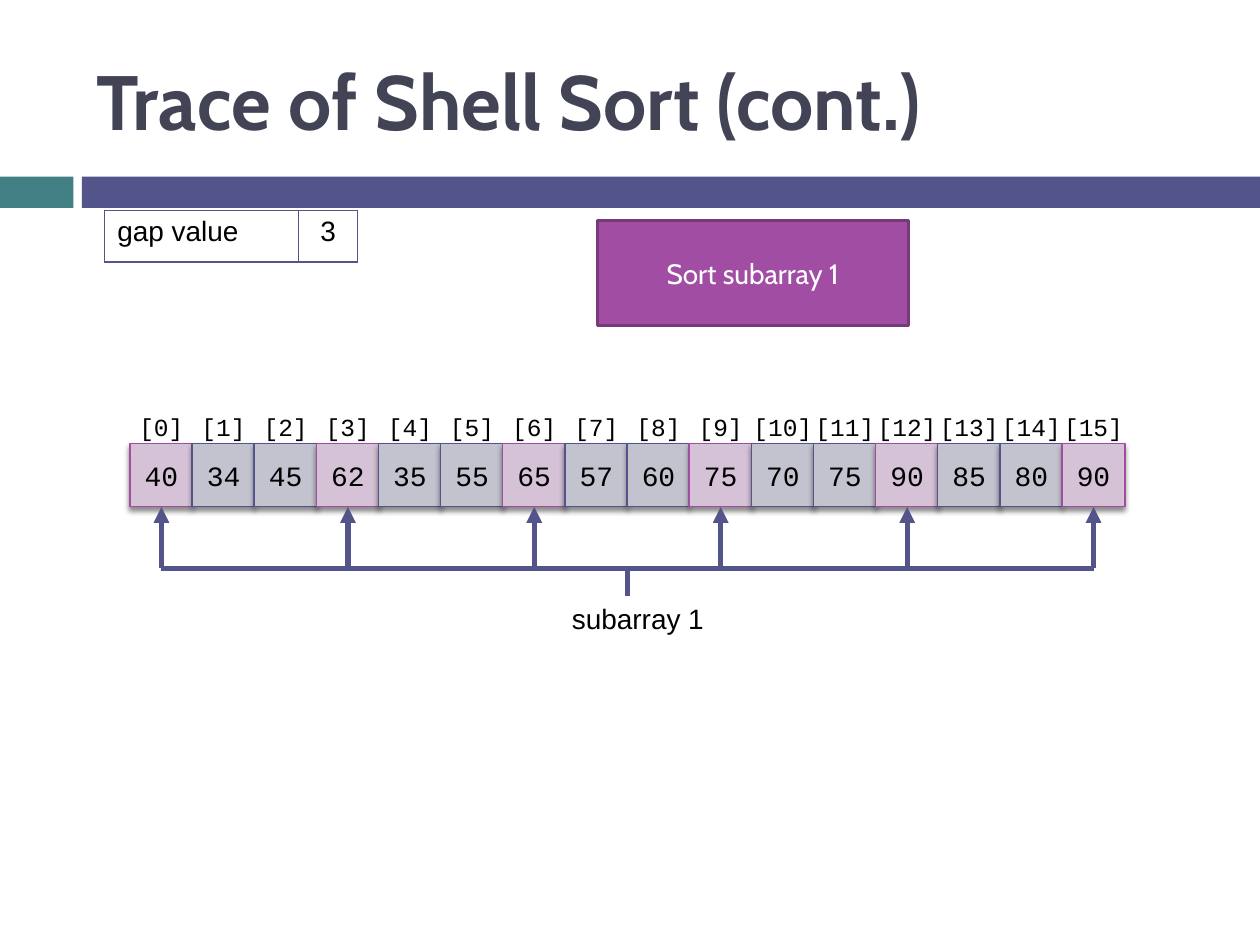
from lxml import etree
from pptx import Presentation
from pptx.dml.color import RGBColor
from pptx.enum.shapes import MSO_CONNECTOR, MSO_SHAPE
from pptx.enum.text import MSO_ANCHOR, PP_ALIGN
from pptx.oxml import parse_xml
from pptx.oxml.ns import nsdecls, qn
from pptx.util import Cm, Pt

RECTANGLE = MSO_SHAPE.RECTANGLE
STRAIGHT = MSO_CONNECTOR.STRAIGHT
MIDDLE, TOP = MSO_ANCHOR.MIDDLE, MSO_ANCHOR.TOP
LEFT, CENTER = PP_ALIGN.LEFT, PP_ALIGN.CENTER

TITLE = "Trace of Shell Sort (cont.)"
STEP = "Sort subarray 1"
SUBARRAY = "subarray 1"
GAP_LABEL, GAP = "gap value", 3
VALUES = [40, 34, 45, 62, 35, 55, 65, 57, 60, 75, 70, 75, 90, 85, 80, 90]

COLORS = {
    "teal": "438086", "indigo": "53548A", "title": "424456",
    "purple": "A04DA3", "dark purple": "763979",
    "pale purple": "D6C2D7", "pale indigo": "C3C3CF",
    "black": "000000", "white": "FFFFFF",
}

# Array geometry in centimetres
FIRST_LEFT, LAST_LEFT = 2.62, 21.41
PITCH = (LAST_LEFT - FIRST_LEFT) / (len(VALUES) - 1)
CELL_TOP, CELL_SIZE = 8.94, 1.27
LABEL_TOP, LABEL_WIDTH, LABEL_HEIGHT = 8.18, 2.03, 0.86
ARROW_TOP, BRACKET_TOP, STEM_BOTTOM = 10.22, 11.46, 12.01

deck = Presentation()
deck.slide_width, deck.slide_height = Cm(25.4), Cm(19.05)
slide = deck.slides.add_slide(deck.slide_layouts[6])
shapes = slide.shapes


def rgb(name):
    return RGBColor.from_string(COLORS[name])


def set_text(frame, text, size, font, color="black", align=CENTER, bold=False):
    frame.text = text
    para = frame.paragraphs[0]
    para.alignment = align
    span = para.runs[0].font
    span.size, span.name, span.bold = Pt(size), font, bold
    span.color.rgb = rgb(color)


def add_text(place, text, size, font, anchor=TOP, **style):
    frame = shapes.add_textbox(*map(Cm, place)).text_frame
    frame.word_wrap = True
    frame.vertical_anchor = anchor
    set_text(frame, text, size, font, **style)


def add_box(place, fill, line=None, line_width=0.79):
    box = shapes.add_shape(RECTANGLE, *map(Cm, place))
    box.shadow.inherit = False
    box.fill.solid()
    box.fill.fore_color.rgb = rgb(fill)
    if line:
        box.line.color.rgb = rgb(line)
        box.line.width = Pt(line_width)
    else:
        box.line.fill.background()
    box.text_frame.vertical_anchor = MIDDLE
    return box


def add_drop_shadow(box):
    effects = box._element.spPr.find(qn("a:effectLst"))
    effects.append(parse_xml(
        f'<a:outerShdw {nsdecls("a")} blurRad="{Pt(3)}" dist="{Pt(2.4)}" '
        'dir="5400000" rotWithShape="0"><a:srgbClr val="000000">'
        '<a:alpha val="45000"/></a:srgbClr></a:outerShdw>'))


def add_line(x1, y1, x2, y2, arrow=False):
    """Draw a bracket line; an arrow points at its first end."""
    line = shapes.add_connector(STRAIGHT, Cm(x1), Cm(y1), Cm(x2), Cm(y2))
    line.line.color.rgb = rgb("indigo")
    line.line.width = Pt(3)
    if arrow:
        etree.SubElement(line.line._ln, qn("a:headEnd"), type="triangle")
    etree.SubElement(line._element.spPr, qn("a:effectLst"))


def add_borders(cell, color):
    properties = cell._tc.get_or_add_tcPr()
    for position, side in enumerate(("lnL", "lnR", "lnT", "lnB")):
        properties.insert(position, parse_xml(
            f'<a:{side} {nsdecls("a")} w="{Pt(1)}"><a:solidFill>'
            f'<a:srgbClr val="{COLORS[color]}"/></a:solidFill></a:{side}>'))


def add_gap_table():
    widths = (3.91, 1.19)
    table = shapes.add_table(1, 2, Cm(2.11), Cm(4.24),
                             Cm(sum(widths)), Cm(1.04)).table
    table.first_row = table.horz_banding = False
    contents = ((GAP_LABEL, LEFT), (str(GAP), CENTER))
    for column, (width, (text, align)) in enumerate(zip(widths, contents)):
        table.columns[column].width = Cm(width)
        cell = table.cell(0, column)
        cell.fill.background()
        set_text(cell.text_frame, text, 16, "Arial", align=align)
        add_borders(cell, "indigo")


def add_array():
    for index, value in enumerate(VALUES):
        left = FIRST_LEFT + index * PITCH
        fill, line = (("pale indigo", "indigo") if index % GAP
                      else ("pale purple", "purple"))
        box = add_box((left, CELL_TOP, CELL_SIZE, CELL_SIZE), fill, line)
        add_drop_shadow(box)
        box.text_frame.word_wrap = False
        set_text(box.text_frame, str(value), 16, "Courier New")
        label_left = left + (CELL_SIZE - LABEL_WIDTH) / 2
        add_text((label_left, LABEL_TOP, LABEL_WIDTH, LABEL_HEIGHT),
                 f"[{index}]", 14, "Courier New")


def add_bracket():
    centers = [FIRST_LEFT + index * PITCH + CELL_SIZE / 2
               for index in range(0, len(VALUES), GAP)]
    for center in centers:
        add_line(center, ARROW_TOP, center, BRACKET_TOP, arrow=True)
    add_line(centers[0], BRACKET_TOP, centers[-1], BRACKET_TOP)
    middle = (centers[0] + centers[-1]) / 2
    add_line(middle, BRACKET_TOP, middle, STEM_BOTTOM)
    add_text((11.28, STEM_BOTTOM, 9.04, 0.94), SUBARRAY, 16, "Arial", align=LEFT)


add_box((0, 3.56, 1.48, 0.63), "teal")
add_box((1.65, 3.56, 23.75, 0.63), "indigo")
add_text((1.7, 0.64, 22.66, 2.74), TITLE, 44, "Cabin", anchor=MIDDLE,
         color="title", align=LEFT, bold=True)
add_array()
add_gap_table()
step_box = add_box((12.04, 4.45, 6.27, 2.11), "purple", "dark purple", 1.5)
set_text(step_box.text_frame, STEP, 16, "Cabin", color="white")
add_bracket()
deck.save("out.pptx")
